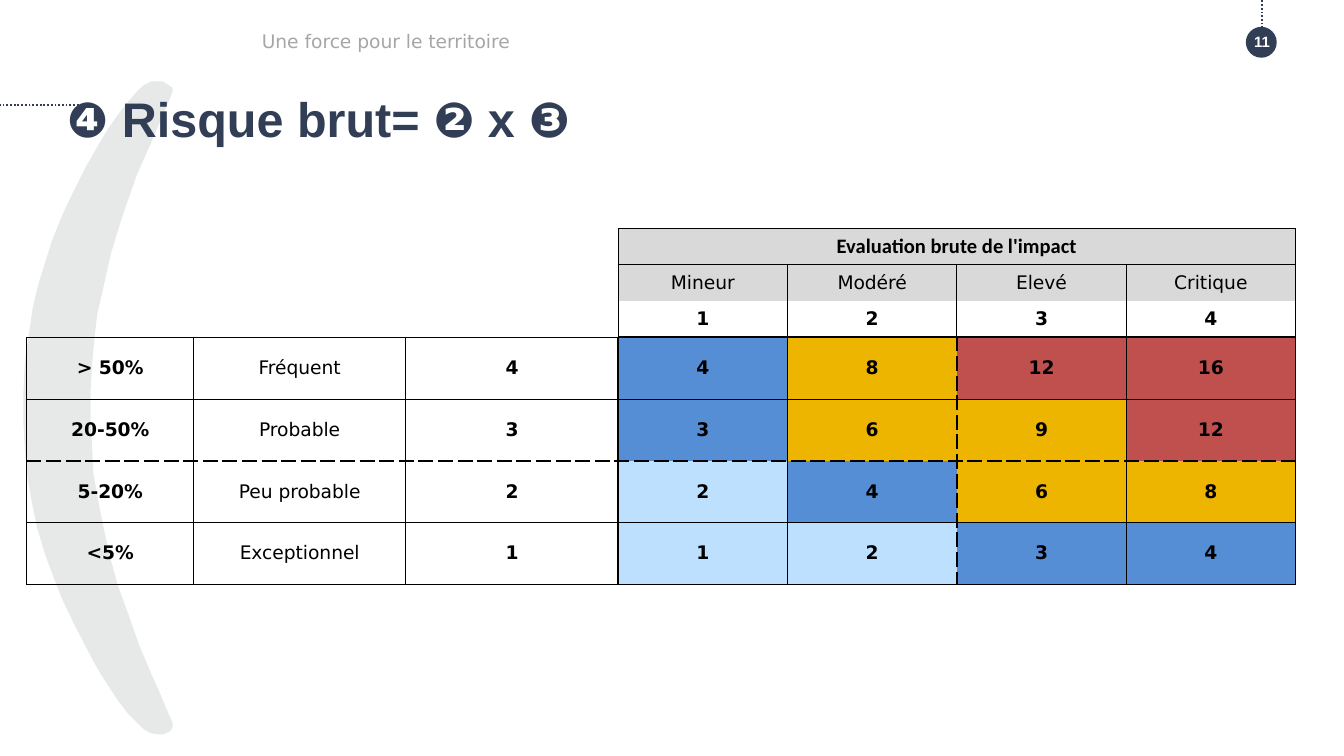
from lxml.etree import SubElement
from pptx import Presentation
from pptx.dml.color import RGBColor
from pptx.enum.dml import MSO_LINE
from pptx.enum.shapes import MSO_CONNECTOR, MSO_SHAPE
from pptx.enum.text import MSO_ANCHOR, PP_ALIGN
from pptx.oxml.ns import qn
from pptx.util import Inches, Pt

NAVY = RGBColor(0x31, 0x3E, 0x56)
PALE_GREY = RGBColor(0xE7, 0xE8, 0xE8)
HEADER_GREY = RGBColor(0xD9, 0xD9, 0xD9)
TEXT_GREY = RGBColor(0xA6, 0xA6, 0xA6)
WHITE = RGBColor(0xFF, 0xFF, 0xFF)
BLACK = RGBColor(0x00, 0x00, 0x00)
LIGHT_BLUE = RGBColor(0xBD, 0xE0, 0xFF)
BLUE = RGBColor(0x55, 0x8E, 0xD5)
YELLOW = RGBColor(0xEE, 0xB5, 0x00)
RED = RGBColor(0xC0, 0x50, 0x4D)

THIN = (0.5, "solid")
THICK = (1, "solid")
DASHED = (1, "dash")


def style_paragraph(paragraph, font_name, size, color, bold, align):
    paragraph.alignment = align
    for span in paragraph.runs:
        span.font.name = font_name
        span.font.size = Pt(size)
        span.font.color.rgb = color
        span.font.bold = bold


def add_border(cell, side, border):
    """Draw one cell side (L, R, T or B); None leaves it without a line."""
    line = SubElement(cell._tc.get_or_add_tcPr(), qn(f"a:ln{side}"))
    if border is None:
        SubElement(line, qn("a:noFill"))
        return
    width, dash = border
    line.set("w", str(Pt(width)))
    fill = SubElement(line, qn("a:solidFill"))
    SubElement(fill, qn("a:srgbClr")).set("val", str(BLACK))
    SubElement(line, qn("a:prstDash")).set("val", dash)


deck = Presentation()
deck.slide_width = Inches(10)
deck.slide_height = Inches(10) * 9 // 16
page = deck.slides.add_slide(deck.slide_layouts[6])

# Background crescent: outer edge downwards, then inner edge upwards
crescent_points = [
    (1.28, 0.66), (1.27, 0.65), (1.21, 0.61), (1.13, 0.61), (1.07, 0.64),
    (1.01, 0.7), (0.95, 0.77), (0.88, 0.86), (0.81, 0.96), (0.75, 1.06),
    (0.64, 1.25), (0.56, 1.41), (0.47, 1.6), (0.39, 1.8), (0.34, 1.96),
    (0.29, 2.12), (0.25, 2.29), (0.22, 2.49), (0.19, 2.7), (0.18, 2.92),
    (0.18, 3.15), (0.19, 3.34), (0.21, 3.55), (0.24, 3.72), (0.28, 3.92),
    (0.34, 4.12), (0.41, 4.31), (0.47, 4.46), (0.56, 4.65), (0.67, 4.86),
    (0.74, 4.99), (0.81, 5.1), (0.89, 5.22), (0.96, 5.31), (1.03, 5.38),
    (1.07, 5.42), (1.12, 5.45), (1.18, 5.46), (1.21, 5.46), (1.26, 5.44),
    (1.28, 5.41), (1.28, 5.38), (1.24, 5.29), (1.19, 5.17), (1.11, 4.99),
    (1.03, 4.8), (0.95, 4.57), (0.87, 4.35), (0.81, 4.13), (0.76, 3.9),
    (0.72, 3.69), (0.69, 3.52), (0.68, 3.31), (0.67, 3.13), (0.67, 2.9),
    (0.68, 2.72), (0.7, 2.5), (0.72, 2.33), (0.76, 2.16), (0.82, 1.89),
    (0.88, 1.69), (0.94, 1.51), (1.01, 1.31), (1.08, 1.15), (1.15, 0.99),
    (1.21, 0.85), (1.26, 0.73), (1.28, 0.68),
]
points = [(Inches(x), Inches(y)) for x, y in crescent_points]
builder = page.shapes.build_freeform(*points[0])
builder.add_line_segments(points[1:], close=True)
crescent = builder.convert_to_shape()
crescent.shadow.inherit = False
crescent.fill.solid()
crescent.fill.fore_color.rgb = PALE_GREY
crescent.line.color.rgb = PALE_GREY
crescent.line.width = Pt(0.75)

badge = page.shapes.add_shape(
    MSO_SHAPE.OVAL, Inches(9.27), Inches(0.2), Inches(0.23), Inches(0.23))
badge.shadow.inherit = False
badge.fill.solid()
badge.fill.fore_color.rgb = NAVY
badge.line.fill.background()

for start_x, start_y, end_x, end_y in [(9.39, 0.21, 9.39, 0), (0.64, 0.78, 0, 0.78)]:
    dotted_line = page.shapes.add_connector(
        MSO_CONNECTOR.STRAIGHT,
        Inches(start_x), Inches(start_y), Inches(end_x), Inches(end_y))
    dotted_line.line.color.rgb = NAVY
    dotted_line.line.width = Pt(1)
    dotted_line.line.dash_style = MSO_LINE.ROUND_DOT
    SubElement(dotted_line._element.spPr, qn("a:effectLst"))

# Risk matrix: each score is likelihood x impact
impacts = ["Mineur", "Modéré", "Elevé", "Critique"]
likelihoods = [("> 50%", "Fréquent", 4), ("20-50%", "Probable", 3),
               ("5-20%", "Peu probable", 2), ("<5%", "Exceptionnel", 1)]
blank = [""] * 3
rows = [blank + ["Evaluation brute de l'impact", "", "", ""],
        blank + impacts,
        blank + [1, 2, 3, 4]]
for share, label, level in likelihoods:
    rows.append([share, label, level] + [level * impact for impact in range(1, 5)])

widths = [1.24] + [1.58] * 2 + [1.26] * 4
heights = [0.27] * 3 + [0.46] * 4
matrix = page.shapes.add_table(
    7, 7, Inches(0.2), Inches(1.7), Inches(sum(widths)), Inches(sum(heights))).table
matrix.first_row = False
matrix.horz_banding = False
for column, width in zip(matrix.columns, widths):
    column.width = Inches(width)
for table_row, height in zip(matrix.rows, heights):
    table_row.height = Inches(height)
matrix.cell(0, 3).merge(matrix.cell(0, 6))

outer_edges = {3: THICK, 5: DASHED, 7: THICK}
for row, values in enumerate(rows):
    for col, value in enumerate(values):
        cell = matrix.cell(row, col)
        cell.margin_left = cell.margin_right = 0
        cell.margin_top = cell.margin_bottom = 0
        cell.vertical_anchor = MSO_ANCHOR.MIDDLE
        if value == "":
            paragraph = cell.text_frame.paragraphs[0]
            SubElement(paragraph._p, qn("a:endParaRPr")).set("sz", "1000")
        else:
            cell.text_frame.text = str(value)
            is_title = row == 0
            is_label = row == 1 or col == 1
            style_paragraph(cell.text_frame.paragraphs[0],
                            "Calibri" if is_title else "DejaVu Sans",
                            11 if is_title else 10, BLACK, not is_label, PP_ALIGN.CENTER)

        for side, edge in (("L", col), ("R", col + 1)):
            if row >= 3:
                border = outer_edges.get(edge, THIN)
            else:
                border = THIN if edge >= 3 else None
            add_border(cell, side, border)
        for side, edge in (("T", row), ("B", row + 1)):
            if edge == 2 or (edge < 3 and col < 3):
                border = None
            elif edge == 5:
                border = DASHED
            else:
                border = THICK if edge in (3, 7) and col >= 3 else THIN
            add_border(cell, side, border)

        if col < 3:
            cell.fill.background()
            continue
        cell.fill.solid()
        if row < 3:
            color = HEADER_GREY if row < 2 else WHITE
        elif value <= 2:
            color = LIGHT_BLUE
        elif value <= 4:
            color = BLUE
        else:
            color = YELLOW if value <= 9 else RED
        cell.fill.fore_color.rgb = color

# Title, motto and page number
for text, left, top, width, height, inset, anchor, font_name, size, color, bold, align in [
    ("❹ Risque brut= ❷ x ❸", 0.5, 0.66, 9, 0.53, 0, MSO_ANCHOR.TOP,
     "Arial", 26, NAVY, True, PP_ALIGN.LEFT),
    ("Une force pour le territoire", 1.85, 0.14, 7.29, 0.33, 0.1, MSO_ANCHOR.MIDDLE,
     "DejaVu Sans", 10, TEXT_GREY, False, PP_ALIGN.LEFT),
    ("11", 9.14, 0.25, 0.5, 0.12, 0, MSO_ANCHOR.MIDDLE,
     "Arial", 8, WHITE, True, PP_ALIGN.CENTER),
]:
    box = page.shapes.add_textbox(Inches(left), Inches(top), Inches(width), Inches(height))
    frame = box.text_frame
    frame.word_wrap = True
    frame.vertical_anchor = anchor
    frame.margin_left = frame.margin_right = Inches(inset)
    frame.margin_top = frame.margin_bottom = Inches(inset / 2)
    frame.text = text
    style_paragraph(frame.paragraphs[0], font_name, size, color, bold, align)

deck.save("out.pptx")
